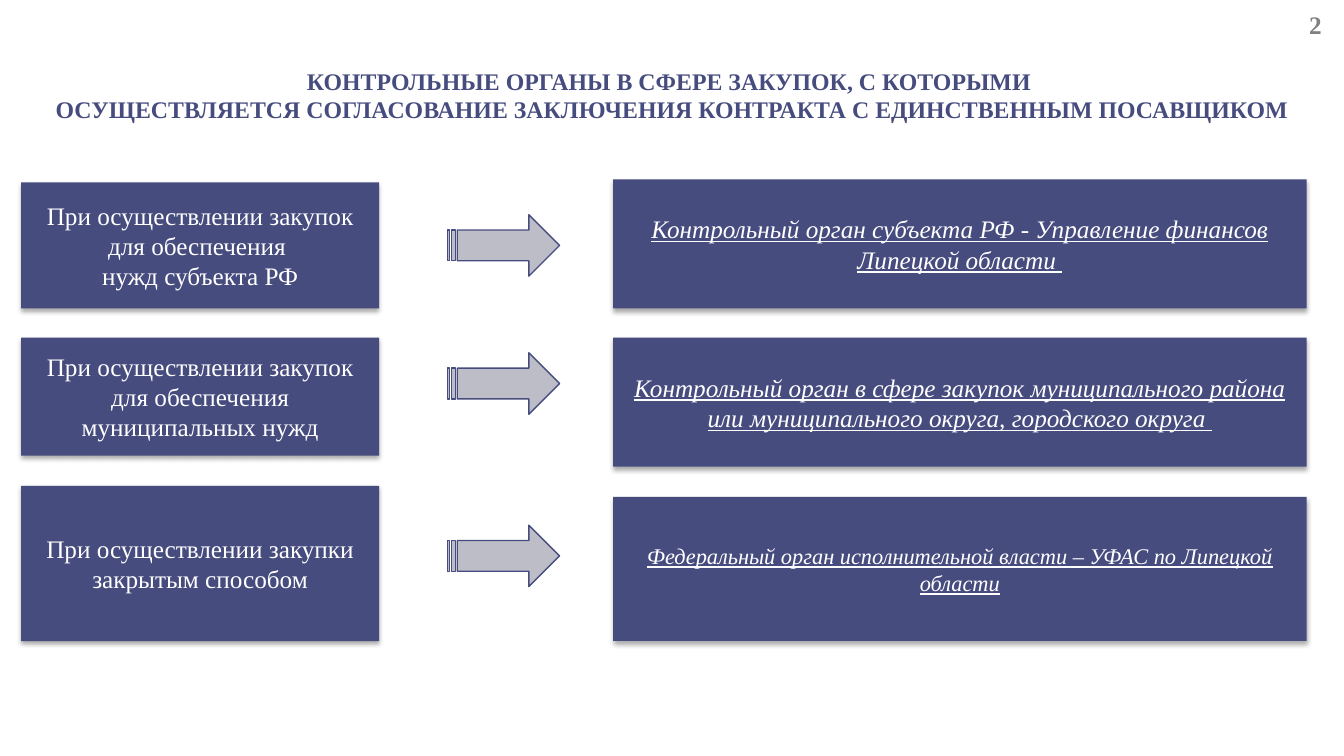
from lxml import etree
from pptx import Presentation
from pptx.dml.color import RGBColor
from pptx.enum import shapes, text
from pptx.oxml import ns
from pptx.util import Inches, Pt

NAVY, GREY, WHITE = "474C7F", "BDBDC7", "FFFFFF"
FONT = "Times New Roman"

# Column edges: left, width
CASE, ARROW, BODY = (0.21, 3.55), (4.44, 1.11), (6.08, 6.88)

# Each row: case (text, top, height), arrow top, body (text, top, height, size)
ROWS = [
    (("При осуществлении закупок для обеспечения \nнужд субъекта РФ", 1.81, 1.25), 2.13,
     ("Контрольный орган субъекта РФ - Управление финансов Липецкой области ",
      1.78, 1.28, 18)),
    (("При осуществлении закупок для обеспечения муниципальных нужд", 3.35, 1.17), 3.5,
     ("Контрольный орган в сфере закупок муниципального района "
      "или муниципального округа, городского округа ", 3.35, 1.28, 18)),
    (("При осуществлении закупки закрытым способом", 4.82, 1.54), 5.21,
     ("Федеральный орган исполнительной власти – УФАС по Липецкой области",
      4.93, 1.43, 16)),
]


def color(code):
    return RGBColor.from_string(code)


def write(shape, words, size, code, **style):
    """Fill a shape with centred text; each line feed is a line break."""
    frame = shape.text_frame
    frame.word_wrap = True
    frame.vertical_anchor = text.MSO_ANCHOR.MIDDLE
    para = frame.paragraphs[0]
    para.text = words.replace("\n", "\v")
    para.alignment = text.PP_ALIGN.CENTER
    for run in para.runs:
        run.font.color.rgb = color(code)
        for key, value in {"name": FONT, "size": Pt(size), **style}.items():
            setattr(run.font, key, value)


def label(slide, area, words, size, code):
    box = slide.shapes.add_textbox(*map(Inches, area))
    write(box, words, size, code, bold=True)


def solid(slide, kind, area, code):
    shape = slide.shapes.add_shape(kind, *map(Inches, area))
    shape.shadow.inherit = False
    shape.fill.solid()
    shape.fill.fore_color.rgb = color(code)
    return shape


def shade(shape):
    """Soft black shadow straight below the shape."""
    effects = shape._element.spPr.find(ns.qn("a:effectLst"))
    outer = etree.SubElement(effects, ns.qn("a:outerShdw"), blurRad=str(Pt(3.5)),
                             dist=str(Pt(2.2)), dir="5400000", rotWithShape="0")
    black = etree.SubElement(outer, ns.qn("a:srgbClr"), val="000000")
    etree.SubElement(black, ns.qn("a:alpha"), val="32000")


def panel(slide, column, top, height, words, size=18, **style):
    left, width = column
    box = solid(slide, shapes.MSO_SHAPE.RECTANGLE, (left, top, width, height), NAVY)
    box.line.fill.background()
    shade(box)
    write(box, words, size, WHITE, **style)


def arrow(slide, top):
    left, width = ARROW
    shape = solid(slide, shapes.MSO_SHAPE.STRIPED_RIGHT_ARROW,
                  (left, top, width, 0.61), GREY)
    shape.line.color.rgb = color(NAVY)
    shape.line.width = Pt(1)


def main():
    deck = Presentation()
    deck.slide_width, deck.slide_height = Inches(13.33), Inches(7.5)
    slide = deck.slides.add_slide(deck.slide_layouts[6])

    # Heading and page number
    label(slide, (0, 0.5, 13.33, 0.88),
          "КОНТРОЛЬНЫЕ ОРГАНЫ В СФЕРЕ ЗАКУПОК, С КОТОРЫМИ \n"
          "ОСУЩЕСТВЛЯЕТСЯ СОГЛАСОВАНИЕ ЗАКЛЮЧЕНИЯ КОНТРАКТА "
          "С ЕДИНСТВЕННЫМ ПОСАВЩИКОМ", 17, NAVY)
    label(slide, (12.22, -0.03, 1.59, 0.54), " 2", 18, "808080")

    # Case, arrow and responsible body, row by row
    for (case, top, height), tip, (body, high, tall, size) in ROWS:
        panel(slide, CASE, top, height, case)
        arrow(slide, tip)
        panel(slide, BODY, high, tall, body, size, italic=True, underline=True)

    deck.save("out.pptx")


if __name__ == "__main__":
    main()
